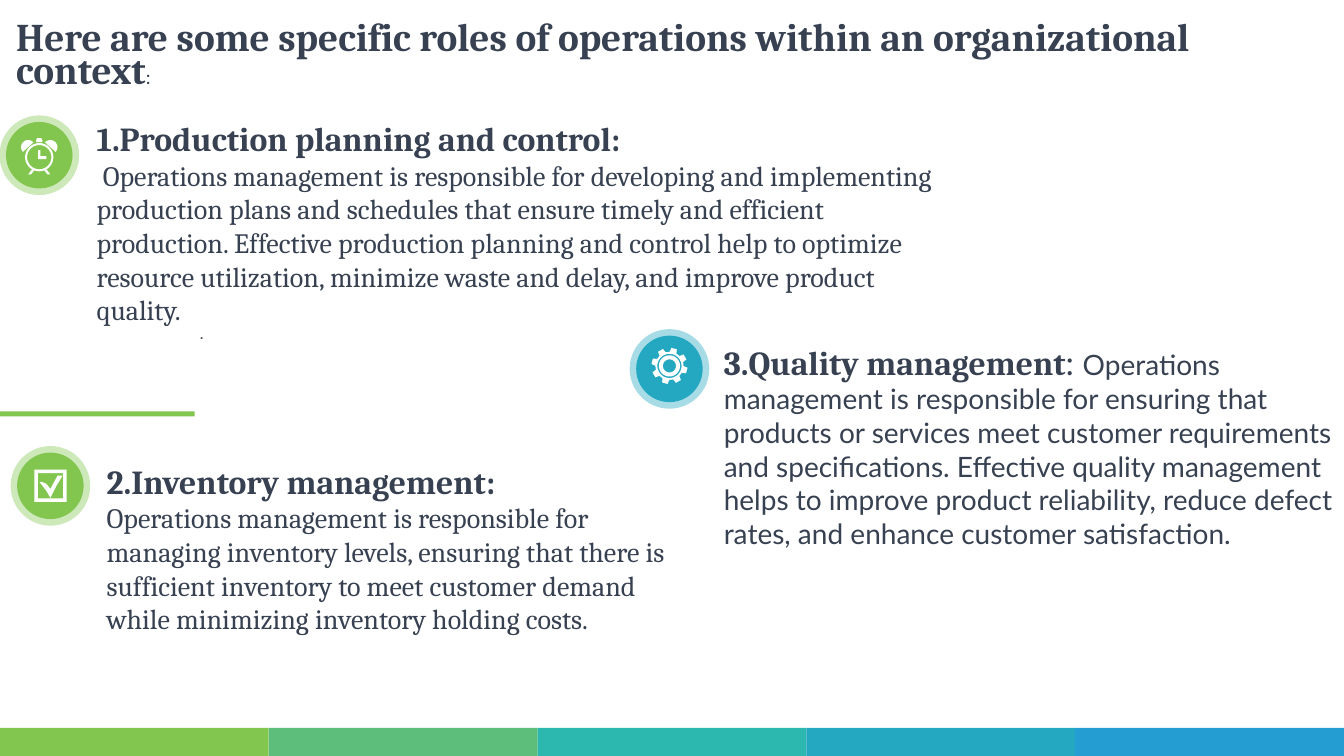
from dataclasses import dataclass
from math import cos, radians, sin

from lxml import etree
from pptx import Presentation
from pptx.dml.color import RGBColor
from pptx.enum.shapes import MSO_SHAPE
from pptx.enum.text import MSO_ANCHOR, MSO_AUTO_SIZE, PP_ALIGN
from pptx.oxml.ns import qn
from pptx.util import Inches, Pt

RECTANGLE, OVAL = MSO_SHAPE.RECTANGLE, MSO_SHAPE.OVAL
TOP, LEFT, NO_FIT = MSO_ANCHOR.TOP, PP_ALIGN.LEFT, MSO_AUTO_SIZE.NONE


@dataclass(frozen=True)
class Theme:
    text: str = "374151"
    muted: str = "404040"
    white: str = "FFFFFF"
    green: str = "82C650"
    teal: str = "24A8C2"
    bars: tuple = ("82C650", "5CBE7A", "2CB8AE", "24A8C2", "249ED2")
    serif: str = "Cambria"
    sans: str = "Lato"
    plain: str = "Arial"
    title_size: float = 28
    heading_size: float = 24
    body_size: float = 20
    small_size: float = 13.5
    dot_size: float = 12


THEME = Theme()
WIDTH, HEIGHT = 13.33, 7.5
BAR_HEIGHT = 0.28
RING, DISC = 0.79, 0.66

HEADING = (THEME.serif, THEME.heading_size, THEME.text, True)
BODY = (THEME.serif, THEME.body_size, THEME.text, False)
TITLE = [
    ("Here are some specific roles of operations within an organizational context",
     (THEME.serif, THEME.title_size, THEME.text, True)),
    (":", (THEME.sans, THEME.small_size, THEME.text, False)),
]
PRODUCTION = [
    [("Production planning and control:", HEADING)],
    [(" Operations management is responsible for developing and implementing production "
      "plans and schedules that ensure timely and efficient production. Effective production "
      "planning and control help to optimize resource utilization, minimize waste and delay, "
      "and improve product quality.", BODY)],
]
INVENTORY = [
    [("2.Inventory management:", HEADING)],
    [("Operations management is responsible for managing inventory levels, ensuring that "
      "there is sufficient inventory to meet customer demand while minimizing inventory "
      "holding costs.", BODY)],
]
QUALITY = [[
    ("3.Quality management", HEADING),
    (": ", (THEME.sans, THEME.heading_size, THEME.text, False)),
    ("Operations management is responsible for ensuring that products or services meet "
     "customer requirements and specifications. Effective quality management helps to improve "
     "product reliability, reduce defect rates, and enhance customer satisfaction.",
     (THEME.sans, THEME.body_size, THEME.text, False)),
]]
DOT = [[(".", (THEME.plain, THEME.dot_size, THEME.muted, False))]]
TEXTS = [
    (PRODUCTION, (0.86, 1.12, 8.55, 2.19), True),
    (DOT, (1.88, 3.15, 2.86, 0.3), False),
    (INVENTORY, (0.96, 4.52, 5.92, 2.19), False),
    (QUALITY, (7.08, 3.34, 6.25, 2.59), False),
]


def arc(radius, start=0, end=360, center=(0, 0)):
    angles = [radians(start + (end - start) * step / 48) for step in range(49)]
    return [(center[0] + radius * cos(a), center[1] + radius * sin(a)) for a in angles]


def mirror(points):
    return [(-x, y) for x, y in points]


def square(half):
    return [(-half, -half), (half, -half), (half, half), (-half, half)]


def gear_outline(teeth, root, tip):
    pitch = 360 / teeth
    corners = [(-0.32, root), (-0.2, tip), (0.2, tip), (0.32, root)]
    return [(radius * cos(radians((tooth + share) * pitch + 15)),
             radius * sin(radians((tooth + share) * pitch + 15)))
            for tooth in range(teeth) for share, radius in corners]


BELL = arc(0.07, 138, 318, (-0.11, -0.1))
FOOT = [(-0.07, 0.12), (-0.11, 0.17), (-0.08, 0.17), (-0.05, 0.13)]
KNOB = [(-0.03, -0.15), (-0.03, -0.17), (-0.02, -0.19),
        (0.02, -0.19), (0.03, -0.17), (0.03, -0.15)]
HANDS = [(-0.01, -0.07), (0.01, -0.07), (0.01, -0.01),
         (0.07, -0.01), (0.07, 0.02), (-0.01, 0.02)]
CHECK = [(-0.11, -0.04), (-0.09, -0.04), (-0.04, -0.02), (0, 0.03), (0.07, -0.1),
         (0.12, -0.1), (0.06, 0), (0, 0.12), (-0.04, 0.05)]
CLOCK_ICON = [arc(0.14), arc(0.12), HANDS, BELL, mirror(BELL), FOOT, mirror(FOOT), KNOB]
CHECK_ICON = [square(0.16), square(0.125), CHECK]
GEAR_ICON = [gear_outline(8, 0.14, 0.18), arc(0.12), arc(0.105), arc(0.065)]
BADGES = [
    (0.39, 1.54, THEME.green, CLOCK_ICON, 0.02),
    (0.5, 4.82, THEME.green, CHECK_ICON, 0),
    (6.64, 3.66, THEME.teal, GEAR_ICON, -0.03),
]


def paint(shape, color, opacity=None):
    shape.shadow.inherit = False
    shape.fill.solid()
    shape.fill.fore_color.rgb = RGBColor.from_string(color)
    shape.line.fill.background()
    if opacity:
        target = shape.fill._xPr.find(".//" + qn("a:srgbClr"))
        etree.SubElement(target, qn("a:alpha")).set("val", str(opacity * 1000))


def add_block(slide, kind, box, color, opacity=None):
    paint(slide.shapes.add_shape(kind, *map(Inches, box)), color, opacity)


def add_badge(slide, x, y, color, contours, icon_shift):
    for size, opacity in ((RING, 40), (DISC, None)):
        add_block(slide, OVAL, (x - size / 2, y - size / 2, size, size), color, opacity)
    placed = [[(Inches(x + dx), Inches(y + icon_shift + dy)) for dx, dy in contour]
              for contour in contours]
    builder = slide.shapes.build_freeform(*placed[0][0])
    for index, contour in enumerate(placed):
        if index:
            builder.move_to(*contour[0])
        builder.add_line_segments(contour[1:], close=True)
    paint(builder.convert_to_shape(), THEME.white)


def set_font(font, style):
    font.name, size, color, font.bold = style
    font.size = Pt(size)
    font.color.rgb = RGBColor.from_string(color)


def fill_paragraph(paragraph, runs):
    for text, style in runs:
        run = paragraph.add_run()
        run.text = text
        set_font(paragraph.font if len(runs) == 1 else run.font, style)


def add_text(slide, paragraphs, box, numbered):
    frame = slide.shapes.add_textbox(*map(Inches, box)).text_frame
    frame.word_wrap = True
    for index, runs in enumerate(paragraphs):
        paragraph = frame.add_paragraph() if index else frame.paragraphs[0]
        if numbered and index == 0:
            properties = paragraph._p.get_or_add_pPr()
            etree.SubElement(properties, qn("a:buAutoNum")).set("type", "arabicPeriod")
        fill_paragraph(paragraph, runs)


def add_title(slide):
    title = slide.shapes.title
    title.left, title.top, title.width, title.height = map(Inches, (0.06, 0.2, 12.66, 0.79))
    frame = title.text_frame
    frame.word_wrap, frame.auto_size, frame.vertical_anchor = True, NO_FIT, TOP
    paragraph = frame.paragraphs[0]
    paragraph.alignment, paragraph.line_spacing = LEFT, 0.7
    fill_paragraph(paragraph, TITLE)


def main():
    presentation = Presentation()
    presentation.slide_width, presentation.slide_height = Inches(WIDTH), Inches(HEIGHT)
    slide = presentation.slides.add_slide(presentation.slide_layouts[5])
    bar_width = WIDTH / len(THEME.bars)
    for column, color in enumerate(THEME.bars):
        box = (column * bar_width, HEIGHT - BAR_HEIGHT, bar_width, BAR_HEIGHT)
        add_block(slide, RECTANGLE, box, color)
    add_block(slide, RECTANGLE, (0, 4.08, 1.93, 0.05), THEME.green)
    add_title(slide)
    for badge in BADGES:
        add_badge(slide, *badge)
    for text in TEXTS:
        add_text(slide, *text)
    presentation.save("out.pptx")


if __name__ == "__main__":
    main()
